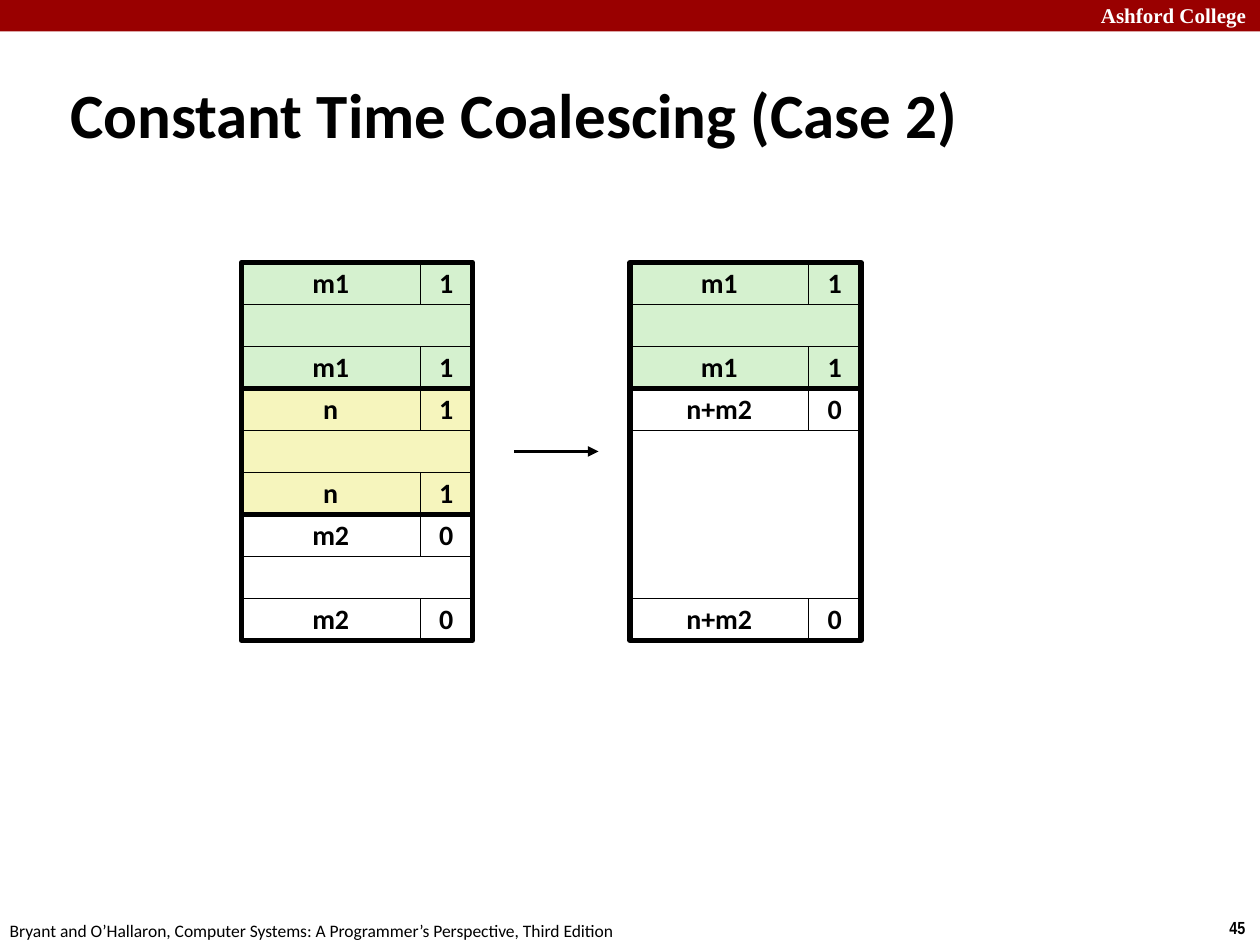
from lxml import etree
from pptx import Presentation
from pptx.dml.color import RGBColor
from pptx.enum.shapes import MSO_CONNECTOR, MSO_SHAPE
from pptx.enum.text import MSO_ANCHOR, PP_ALIGN
from pptx.oxml.ns import qn
from pptx.util import Pt

RECTANGLE = MSO_SHAPE.RECTANGLE
STRAIGHT = MSO_CONNECTOR.STRAIGHT
TOP, MIDDLE = MSO_ANCHOR.TOP, MSO_ANCHOR.MIDDLE
LEFT, CENTER = PP_ALIGN.LEFT, PP_ALIGN.CENTER

BLACK, WHITE, RED = "000000", "FFFFFF", "990000"
GREEN, YELLOW = "D5F1CF", "F6F5BD"
SIZE_WIDTH, FLAG_WIDTH, ROW_HEIGHT = 102, 30, 24
BLOCK_WIDTH = SIZE_WIDTH + FLAG_WIDTH
CELL_FORMAT = {"name": "Calibri", "size": Pt(16), "bold": True}


def color(value):
    """Turn a hex string into a colour."""
    return RGBColor.from_string(value)


def write(shape, text, font_format, font_color=BLACK, alignment=LEFT, anchor=TOP):
    """Put one formatted line of text into a shape."""
    shape.text_frame.vertical_anchor = anchor
    paragraph = shape.text_frame.paragraphs[0]
    paragraph.alignment = alignment
    run = paragraph.add_run()
    run.text = text
    for attribute, value in font_format.items():
        setattr(run.font, attribute, value)
    run.font.color.rgb = color(font_color)


def add_label(slide, box, text, font_format, font_color=BLACK, anchor=TOP):
    """Add a wrapping text box that runs to its right edge."""
    label = slide.shapes.add_textbox(*map(Pt, box))
    label.text_frame.word_wrap = True
    label.text_frame.margin_right = 0
    write(label, text, font_format, font_color, anchor=anchor)


def add_box(slide, box, fill=None, line_width=None):
    """Add a rectangle with an optional fill and black outline."""
    shape = slide.shapes.add_shape(RECTANGLE, *map(Pt, box))
    shape.shadow.inherit = False
    if fill:
        shape.fill.solid()
        shape.fill.fore_color.rgb = color(fill)
    else:
        shape.fill.background()
    if line_width:
        shape.line.color.rgb = color(BLACK)
        shape.line.width = Pt(line_width)
    else:
        shape.line.fill.background()
    return shape


def add_tag_row(slide, left, top, size, flag, fill):
    """Add a header or footer row with its size and allocated flag."""
    cells = ((left, SIZE_WIDTH, size), (left + SIZE_WIDTH, FLAG_WIDTH, flag))
    for cell_left, width, text in cells:
        cell = add_box(slide, (cell_left, top, width, ROW_HEIGHT), fill, 0.25)
        cell.text_frame.word_wrap = False
        write(cell, text, CELL_FORMAT, alignment=CENTER, anchor=MIDDLE)
        cell.text_frame.paragraphs[0].line_spacing = 0.98


def add_memory(slide, left, top, blocks):
    """Stack memory blocks, each with a header, a payload and a footer."""
    for size, flag, fill, rows in blocks:
        height = rows * ROW_HEIGHT
        add_tag_row(slide, left, top, size, flag, fill)
        payload = (left, top + ROW_HEIGHT, BLOCK_WIDTH, height - 2 * ROW_HEIGHT)
        add_box(slide, payload, fill, 0.25)
        add_tag_row(slide, left, top + height - ROW_HEIGHT, size, flag, fill)
        add_box(slide, (left, top, BLOCK_WIDTH, height), line_width=3)
        top += height


def add_arrow(slide, left, top, length):
    """Add a horizontal arrow pointing right."""
    arrow = slide.shapes.add_connector(
        STRAIGHT, Pt(left), Pt(top), Pt(left + length), Pt(top))
    arrow.line.color.rgb = color(BLACK)
    arrow.line.width = Pt(2)
    etree.SubElement(arrow.line._get_or_add_ln(), qn("a:tailEnd"), type="triangle")
    etree.SubElement(arrow._element.spPr, qn("a:effectLst"))


def add_frame(slide, width, height):
    """Add the top band, its name, the page number and the source line."""
    add_box(slide, (0, 0, width, 18), RED)
    add_label(slide, (width - 98, -2, 98, 22), "Ashford College",
              {"name": "Times New Roman", "size": Pt(12), "bold": True}, WHITE)
    add_label(slide, (width - 24.5, height - 19.5, 24.5, 19.5), "45",
              {"name": "Arial Narrow", "size": Pt(10), "bold": True})
    add_label(slide, (-1.5, height - 18, 366, 19.5),
              "Bryant and O’Hallaron, Computer Systems: "
              "A Programmer’s Perspective, Third Edition",
              {"name": "Calibri", "size": Pt(10)})


def main():
    """Build and save the coalescing slide."""
    presentation = Presentation()
    width, height = 720, 540
    presentation.slide_width, presentation.slide_height = Pt(width), Pt(height)
    slide = presentation.slides.add_slide(presentation.slide_layouts[6])
    add_frame(slide, width, height)
    add_label(slide, (33, 42, 654, 45), "Constant Time Coalescing (Case 2)",
              {"name": "Calibri", "size": Pt(36), "bold": True}, anchor=MIDDLE)
    previous = ("m1", "1", GREEN, 3)
    add_memory(slide, 138, 150,
               [previous, ("n", "1", YELLOW, 3), ("m2", "0", WHITE, 3)])
    add_arrow(slide, 294, 258, 48)
    add_memory(slide, 360, 150, [previous, ("n+m2", "0", WHITE, 6)])
    presentation.save("out.pptx")


if __name__ == "__main__":
    main()
